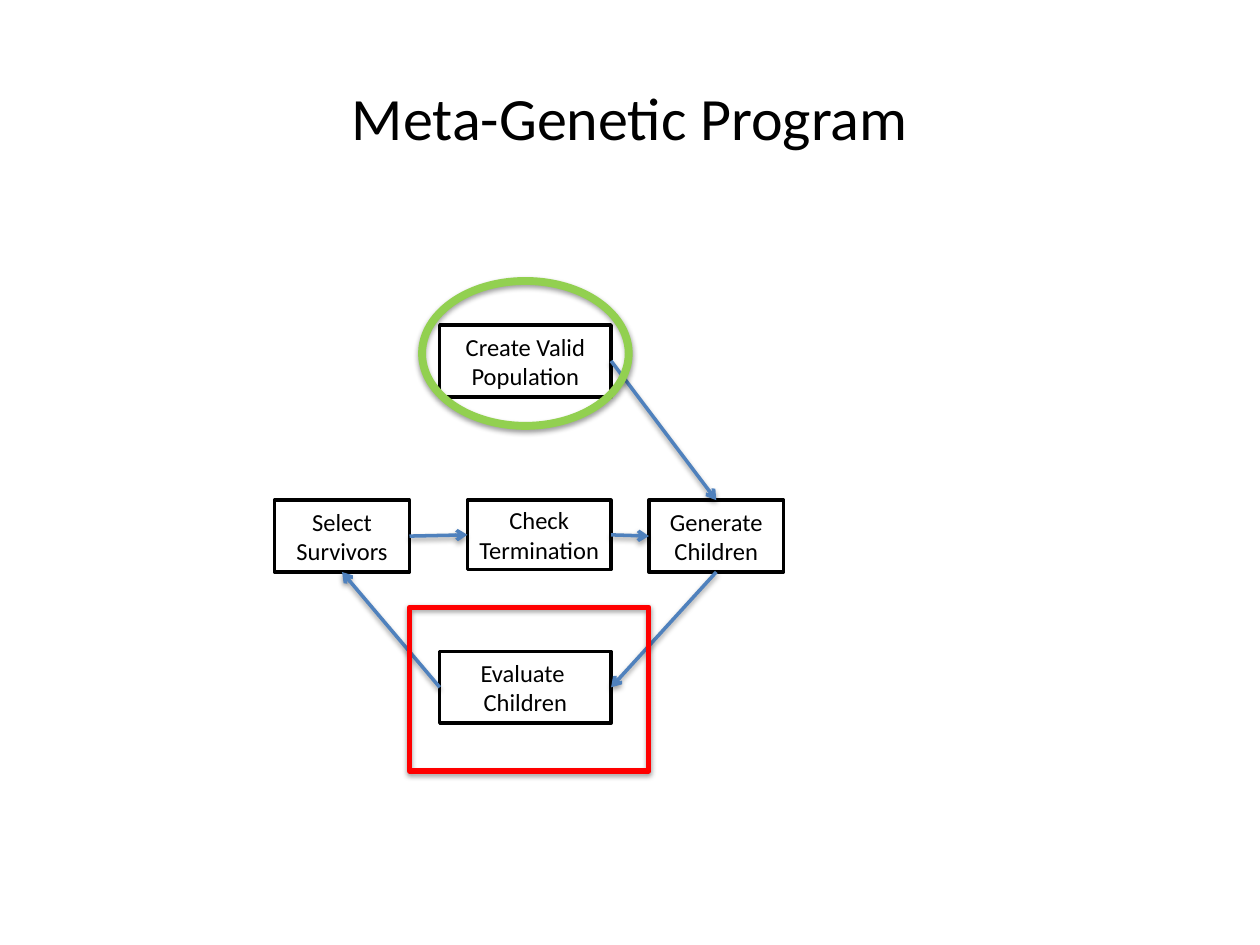
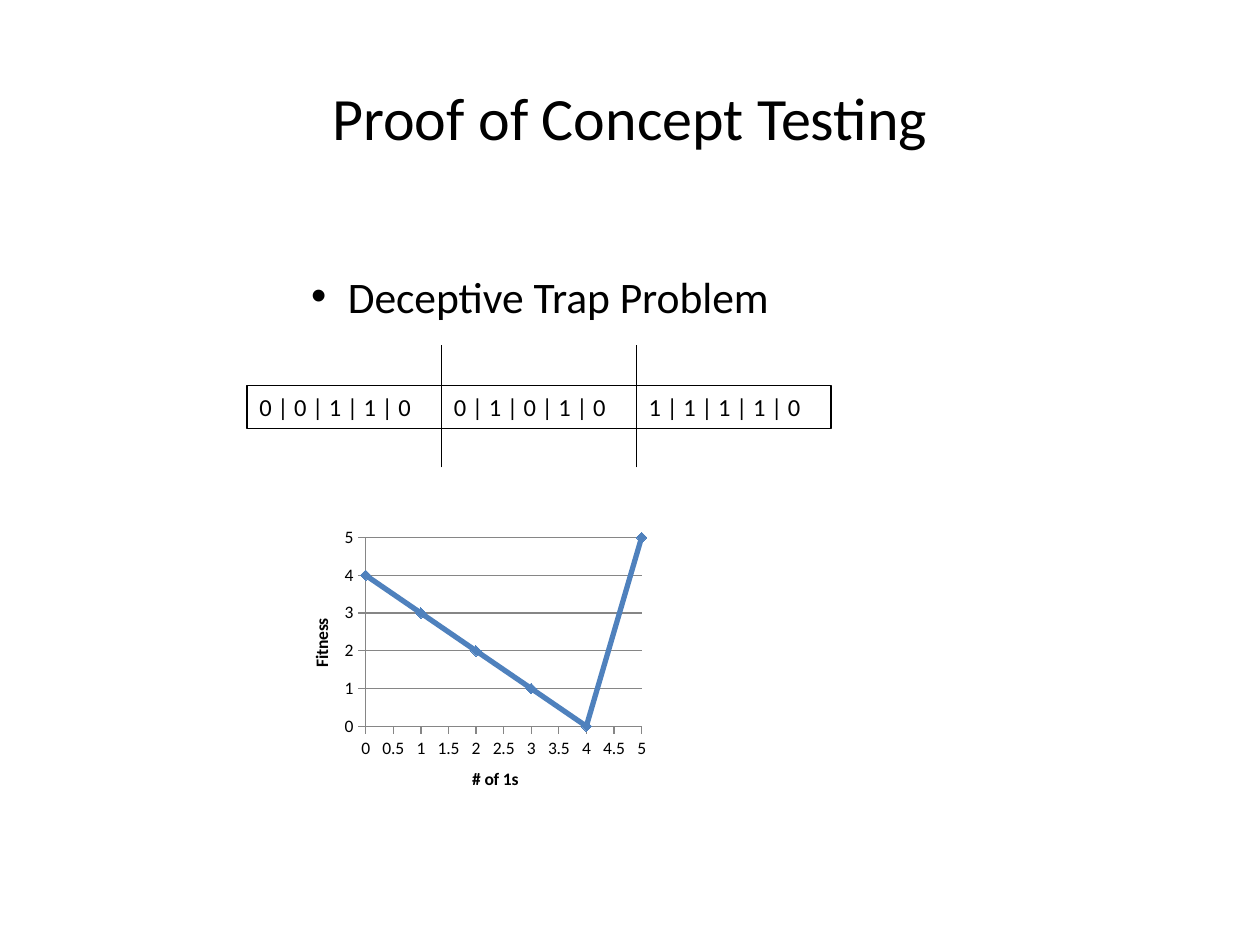
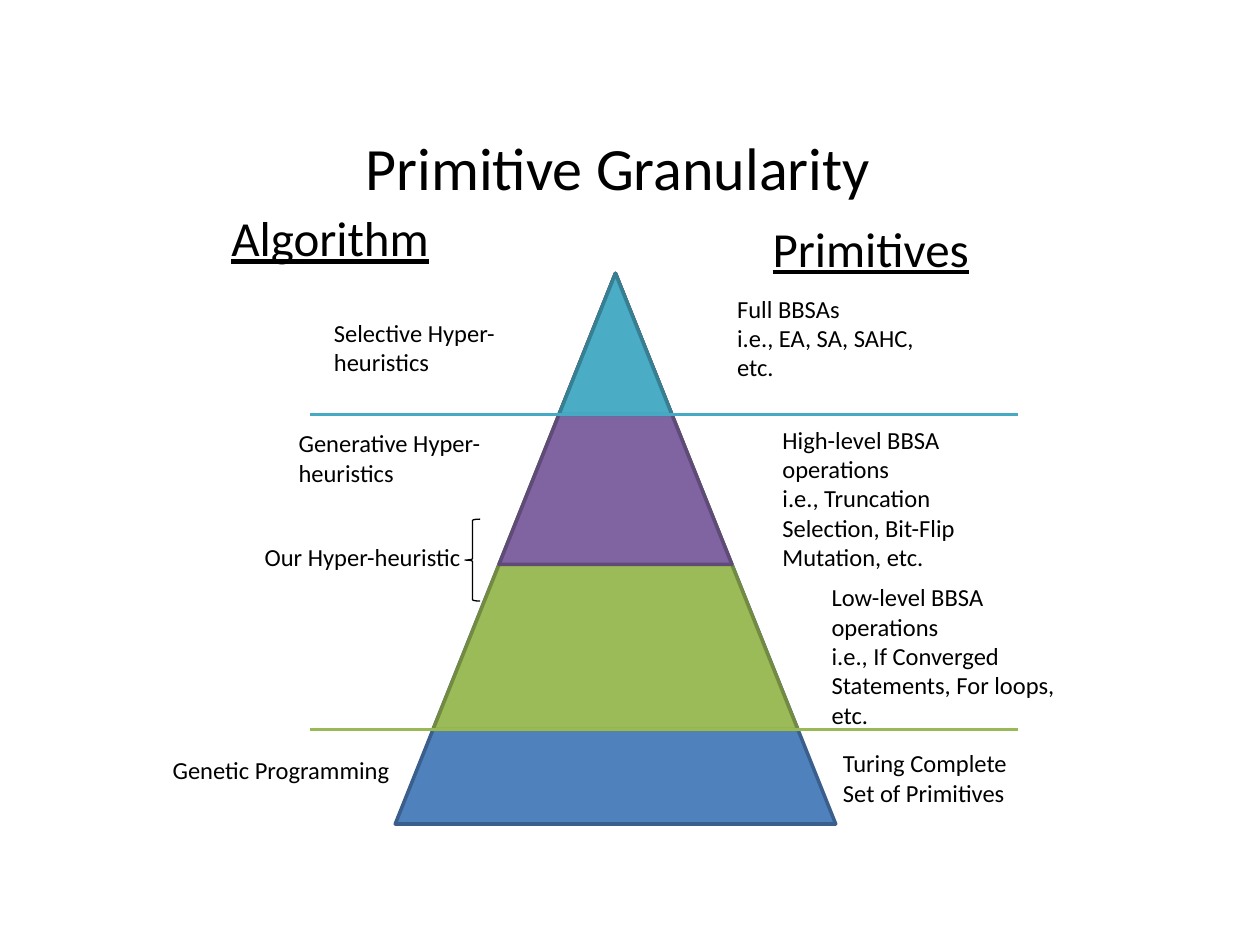
from lxml import etree
from pptx import Presentation
from pptx.chart.data import XyChartData
from pptx.dml.color import RGBColor
from pptx.enum.chart import XL_CHART_TYPE, XL_MARKER_STYLE, XL_TICK_MARK
from pptx.enum.shapes import MSO_CONNECTOR, MSO_SHAPE
from pptx.enum.text import MSO_ANCHOR, MSO_AUTO_SIZE, PP_ALIGN
from pptx.oxml.ns import qn
from pptx.util import Inches, Pt

RECT, OVAL = MSO_SHAPE.RECTANGLE, MSO_SHAPE.OVAL
TRIANGLE, BRACE = MSO_SHAPE.ISOSCELES_TRIANGLE, MSO_SHAPE.LEFT_BRACE
LEFT, CENTER = PP_ALIGN.LEFT, PP_ALIGN.CENTER
TOP, MIDDLE = MSO_ANCHOR.TOP, MSO_ANCHOR.MIDDLE
STRAIGHT = MSO_CONNECTOR.STRAIGHT
NO_FIT = MSO_AUTO_SIZE.NONE

BLACK, WHITE = RGBColor(0, 0, 0), RGBColor(255, 255, 255)
BLUE, BLUE_EDGE = RGBColor(0x4F, 0x81, 0xBD), RGBColor(0x3A, 0x5F, 0x8C)
GREEN, GREEN_EDGE = RGBColor(0x9B, 0xBB, 0x59), RGBColor(0x73, 0x8A, 0x42)
PURPLE, PURPLE_EDGE = RGBColor(0x80, 0x64, 0xA2), RGBColor(0x5F, 0x4A, 0x78)
TEAL, TEAL_EDGE = RGBColor(0x4B, 0xAC, 0xC6), RGBColor(0x37, 0x7F, 0x92)
TEAL_RULE, GREEN_RULE = RGBColor(0x46, 0xAA, 0xC5), RGBColor(0x98, 0xB9, 0x55)
RED, LIME = RGBColor(255, 0, 0), RGBColor(0x92, 0xD0, 0x50)
GRAY = RGBColor(0x86, 0x86, 0x86)
FONT = "Calibri"
TITLE_AT = (0.5, 0.3, 9, 1.25)

STEPS = {
    "create": (["Create Valid Population"], (3.49, 2.58, 1.36, 0.57)),
    "generate": (["Generate Children"], (5.15, 3.97, 1.07, 0.57)),
    "evaluate": (["Evaluate ", "Children"], (3.49, 5.17, 1.36, 0.57)),
    "select": (["Select Survivors"], (2.18, 3.97, 1.07, 0.57)),
    "check": (["Check", "Termination"], (3.71, 3.97, 1.14, 0.55)),
}
SITE = {"top": 0, "left": 1, "bottom": 2, "right": 3}
FLOW = [
    ("create", "right", "generate", "top"),
    ("generate", "bottom", "evaluate", "right"),
    ("evaluate", "left", "select", "bottom"),
    ("select", "right", "check", "left"),
    ("check", "right", "generate", "left"),
]
HIGHLIGHTS = [
    (RECT, (3.25, 4.82, 1.9, 1.3), RED, 3),
    (OVAL, (3.35, 2.23, 1.64, 1.15), LIME, 4.5),
]

GENES = ["0 | 0 | 1 | 1 | 0", "0 | 1 | 0 | 1 | 0", "1 | 1 | 1 | 1 | 0"]
GENES_LEFT, GENES_TOP, GENE_W, GENE_H = 1.96, 3.06, 1.545, 0.34
FITNESS = [4, 3, 2, 1, 0, 5]

APEX_X, APEX_Y, WIDTH_TO_HEIGHT = 4.885, 2.17, 0.8
LAYERS = [
    (4.37, BLUE, BLUE_EDGE),
    (3.62, GREEN, GREEN_EDGE),
    (2.31, PURPLE, PURPLE_EDGE),
    (1.12, TEAL, TEAL_EDGE),
]
RULES = [(1.12, TEAL_RULE), (3.62, GREEN_RULE)]
HEADINGS = [("Primitives", (5.95, 1.69, 1.92, 0.55)), ("Algorithm", (1.66, 1.61, 1.92, 0.55))]
LABELS = [
    (["Full BBSAs", "i.e., EA, SA, SAHC, etc."], (5.77, 2.29, 1.72, 0.79)),
    (["Selective Hyper-heuristics"], (2.57, 2.48, 1.85, 0.55)),
    (["Our Hyper-heuristic"], (2.02, 4.26, 1.85, 0.31)),
    (["Turing Complete Set of Primitives"], (6.61, 5.9, 1.72, 0.55)),
    (["Generative Hyper-heuristics"], (2.29, 3.36, 2.04, 0.55)),
    (["High-level BBSA operations", "i.e., Truncation Selection, Bit-Flip Mutation, etc."],
     (6.13, 3.33, 2.04, 1.26)),
    (["Low-level BBSA operations", "i.e., If Converged Statements, For loops, etc."],
     (6.52, 4.58, 2.14, 1.26)),
    (["Genetic Programming"], (1.29, 5.95, 2.04, 0.31)),
]


def inches(at):
    return [Inches(v) for v in at]


def write(sp, lines, size=14, align=LEFT, anchor=TOP, underline=None, inset=(0.08, 0.04)):
    tf = sp.text_frame
    tf.word_wrap, tf.auto_size, tf.vertical_anchor = True, NO_FIT, anchor
    tf.margin_left = tf.margin_right = Inches(inset[0])
    tf.margin_top = tf.margin_bottom = Inches(inset[1])
    for i, line in enumerate(lines):
        p = tf.add_paragraph() if i else tf.paragraphs[0]
        p.alignment = align
        r = p.add_run()
        r.text = line
        f = r.font
        f.name, f.size, f.underline = FONT, Pt(size), underline
        f.color.rgb = BLACK


def fill_placeholder(sp, text, at, **fmt):
    sp.left, sp.top, sp.width, sp.height = inches(at)
    write(sp, [text], inset=(0.1, 0.05), **fmt)


def add_slide(prs, title, layout=5, at=TITLE_AT):
    s = prs.slides.add_slide(prs.slide_layouts[layout])
    fill_placeholder(s.shapes.title, title, at, size=34.3, align=CENTER, anchor=MIDDLE)
    return s


def outline(sp, color, width, shadow=False):
    sp.line.color.rgb = color
    sp.line.width = Pt(width)
    effects = etree.SubElement(sp._element.spPr, qn("a:effectLst"))
    if shadow:
        outer = etree.SubElement(effects, qn("a:outerShdw"), blurRad=str(Pt(3.1)),
                                 dist=str(Pt(1.6)), dir="5400000", rotWithShape="0")
        shade = etree.SubElement(outer, qn("a:srgbClr"), val="000000")
        etree.SubElement(shade, qn("a:alpha"), val="38000")


def add_outlined(s, kind, at, color, width, fill=None, shadow=False):
    sp = s.shapes.add_shape(kind, *inches(at))
    if fill is None:
        sp.fill.background()
    else:
        sp.fill.solid()
        sp.fill.fore_color.rgb = fill
    outline(sp, color, width, shadow)
    return sp


def add_line(s, ends, color, width):
    c = s.shapes.add_connector(STRAIGHT, *inches(ends))
    outline(c, color, width)


def add_arrow(s, start, start_side, end, end_side):
    c = s.shapes.add_connector(STRAIGHT, 0, 0, 0, 0)
    c.begin_connect(start, SITE[start_side])
    c.end_connect(end, SITE[end_side])
    outline(c, BLUE, 2, shadow=True)
    etree.SubElement(c._element.spPr.find(qn("a:ln")), qn("a:tailEnd"), type="arrow")


def add_label(s, lines, at, **fmt):
    write(s.shapes.add_textbox(*inches(at)), lines, **fmt)


def format_axis(axis, title, unit):
    axis.minimum_scale, axis.maximum_scale, axis.major_unit = 0, 5, unit
    axis.major_tick_mark, axis.minor_tick_mark = XL_TICK_MARK.OUTSIDE, XL_TICK_MARK.NONE
    axis.format.line.color.rgb = GRAY
    axis.tick_labels.number_format = "General"
    axis.tick_labels.number_format_is_linked = False
    tf = axis.axis_title.text_frame
    tf.text = title
    f = tf.paragraphs[0].runs[0].font
    f.name, f.size, f.bold = FONT, Pt(10), True
    f.color.rgb = BLACK


def add_fitness_chart(s):
    data = XyChartData()
    series = data.add_series("Series 1")
    for ones, fitness in enumerate(FITNESS):
        series.add_data_point(ones, fitness)
    chart = s.shapes.add_chart(XL_CHART_TYPE.XY_SCATTER_LINES,
                               *inches((2.26, 4.15, 2.92, 2.34)), data).chart
    chart.has_legend = chart.has_title = False
    chart.font.name, chart.font.size = FONT, Pt(10)
    chart.font.color.rgb = BLACK
    format_axis(chart.category_axis, "# of 1s", 0.5)
    format_axis(chart.value_axis, "Fitness", 1)
    chart.category_axis.has_major_gridlines = False
    chart.value_axis.has_major_gridlines = True
    chart.value_axis.major_gridlines.format.line.color.rgb = GRAY

    plot = chart.plots[0]
    plot.vary_by_categories = False
    curve = plot.series[0]
    curve.smooth = False
    curve.format.line.color.rgb = BLUE
    curve.format.line.width = Pt(3)
    marker = curve.marker
    marker.style, marker.size = XL_MARKER_STYLE.DIAMOND, 6
    marker.format.fill.solid()
    marker.format.fill.fore_color.rgb = BLUE
    marker.format.line.color.rgb = BLUE

    area = chart._chartSpace.chart.plotArea
    for old in area.findall(qn("c:layout")):
        area.remove(old)
    layout = etree.Element(qn("c:layout"))
    area.insert(0, layout)
    manual = etree.SubElement(layout, qn("c:manualLayout"))
    for tag, val in [("layoutTarget", "inner"), ("xMode", "edge"), ("yMode", "edge"),
                     ("x", "0.22"), ("y", "0.05"), ("w", "0.75"), ("h", "0.64")]:
        etree.SubElement(manual, qn("c:" + tag), val=val)


def build_program(prs):
    s = add_slide(prs, "Meta-Genetic Program")
    boxes = {}
    for name, (lines, at) in STEPS.items():
        boxes[name] = add_outlined(s, RECT, at, BLACK, 2, fill=WHITE)
        write(boxes[name], lines, align=CENTER, anchor=MIDDLE)
    for start, start_side, end, end_side in FLOW:
        add_arrow(s, boxes[start], start_side, boxes[end], end_side)
    for kind, at, color, width in HIGHLIGHTS:
        add_outlined(s, kind, at, color, width, shadow=True)


def build_testing(prs):
    s = add_slide(prs, "Proof of Concept Testing", layout=1)
    body = s.placeholders[1]
    fill_placeholder(body, "Deceptive Trap Problem", (2.37, 2.09, 5.26, 0.56), size=24.9)
    pPr = body.text_frame.paragraphs[0]._p.get_or_add_pPr()
    pPr.set("marL", str(Inches(0.29)))
    pPr.set("indent", str(-Inches(0.29)))
    add_fitness_chart(s)
    for i, genes in enumerate(GENES):
        x = GENES_LEFT + i * GENE_W
        cell = add_outlined(s, RECT, (x, GENES_TOP, GENE_W, GENE_H), BLACK, 0.75)
        write(cell, [genes], anchor=MIDDLE, inset=(0.1, 0.04))
        if i:
            add_line(s, (x, 3.71, x, 2.74), BLACK, 0.75)


def build_granularity(prs):
    s = add_slide(prs, "Primitive Granularity", at=(2.16, 0.99, 5.49, 0.67))
    for height, fill, edge in LAYERS:
        width = height * WIDTH_TO_HEIGHT
        add_outlined(s, TRIANGLE, (APEX_X - width / 2, APEX_Y, width, height), edge, 2, fill=fill)
    for depth, color in RULES:
        y = APEX_Y + depth
        add_line(s, (8.08, y, 2.46, y), color, 2.25)
    for text, at in HEADINGS:
        add_label(s, [text], at, size=28, align=CENTER, underline=True)
    for lines, at in LABELS:
        add_label(s, lines, at)
    add_outlined(s, BRACE, (3.69, 4.12, 0.12, 0.65), BLACK, 0.75)


def main():
    prs = Presentation()
    prs.slide_width, prs.slide_height = Inches(10), Inches(7.5)
    build_program(prs)
    build_testing(prs)
    build_granularity(prs)
    prs.save("out.pptx")


if __name__ == "__main__":
    main()
